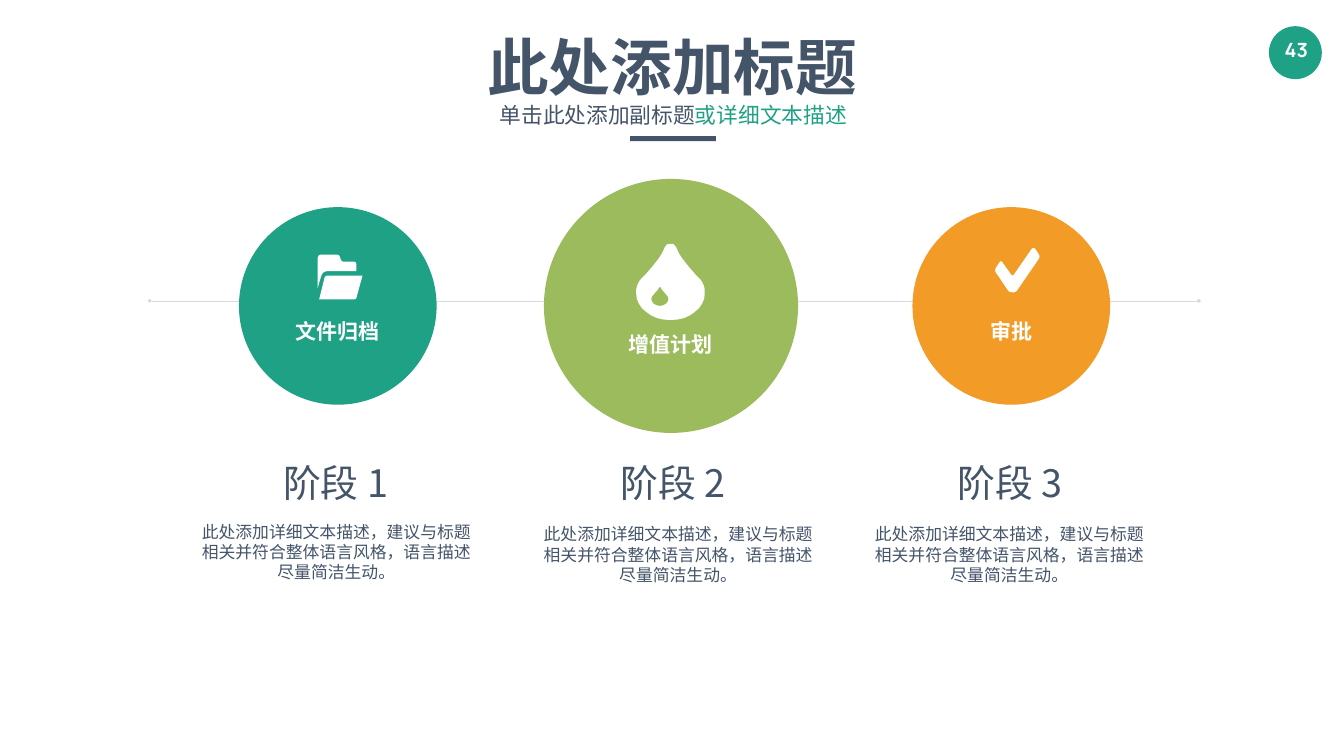
from lxml import etree
from pptx import Presentation
from pptx.dml.color import RGBColor
from pptx.enum.dml import MSO_LINE
from pptx.enum.shapes import MSO_CONNECTOR, MSO_SHAPE
from pptx.enum.text import MSO_ANCHOR, PP_ALIGN
from pptx.oxml.ns import qn
from pptx.util import Inches, Pt

COLORS = {"ink": "445469", "teal": "1EA185", "green": "9BBB5C",
          "orange": "F29B26", "rule": "D9D9D9", "white": "FFFFFF"}
CJK = "Noto Sans CJK SC"
DESCRIPTION = "此处添加详细文本描述，建议与标题相关并符合整体语言风格，语言描述尽量简洁生动。"

prs = Presentation()
prs.slide_width, prs.slide_height = Inches(26.66), Inches(15)
s = prs.slides.add_slide(prs.slide_layouts[6])


def paint(sp, color):
    """Give a shape a plain fill, with neither outline nor shadow."""
    sp.shadow.inherit = False
    sp.fill.solid()
    sp.fill.fore_color.rgb = RGBColor.from_string(COLORS[color])
    sp.line.fill.background()


def write(sp, parts, size, bold=False, font=CJK, insets=(0.27, 0.13),
          anchor=MSO_ANCHOR.TOP, wrap=True):
    """Fill a shape with one centred paragraph made of (text, color) parts."""
    tf = sp.text_frame
    tf.word_wrap = wrap
    tf.vertical_anchor = anchor
    tf.margin_left = tf.margin_right = Inches(insets[0])
    tf.margin_top = tf.margin_bottom = Inches(insets[1])
    p = tf.paragraphs[0]
    p.alignment = PP_ALIGN.CENTER
    for text, color in parts:
        r = p.add_run()
        r.text = text
        r.font.size, r.font.bold, r.font.name = Pt(size), bold, font
        r.font.color.rgb = RGBColor.from_string(COLORS[color])
        ea = etree.Element(qn("a:ea"), typeface=font)
        r.font._element.find(qn("a:latin")).addnext(ea)
    return tf


# Page number
badge = s.shapes.add_shape(MSO_SHAPE.OVAL, Inches(25.17), Inches(0.52),
                           Inches(1.05), Inches(1.05))
paint(badge, "teal")
number = s.shapes.add_textbox(Inches(25.23), Inches(0.66), Inches(0.97), Inches(0.67))
write(number, [("43", "white")], 28, True, "Manrope", (0.2, 0.1), wrap=False)

# Timeline
timeline = s.shapes.add_connector(MSO_CONNECTOR.STRAIGHT, Inches(2.97), Inches(5.97),
                                  Inches(23.78), Inches(5.97))
timeline.line.color.rgb = RGBColor.from_string(COLORS["rule"])
timeline.line.width = Pt(0.5)
timeline.line.dash_style = MSO_LINE.ROUND_DOT
ln = timeline.line._get_or_add_ln()
for end in ("a:headEnd", "a:tailEnd"):
    etree.SubElement(ln, qn(end), type="diamond")
etree.SubElement(timeline._element.spPr, qn("a:effectLst"))

# Stages: label, color, circle centre and diameter, label drop below the centre,
# left of the heading, left and top of the description
stages = [
    ("文件归档", "teal", 6.7, 3.92, 0.5, 3.61, 3.71, 10.22),
    ("增值计划", "green", 13.31, 5.04, 0.76, 10.3, 10.49, 10.27),
    ("审批", "orange", 20.06, 3.92, 0.5, 16.98, 17.06, 10.27),
]
for i, (label, color, cx, size, drop, head_x, desc_x, desc_y) in enumerate(stages, 1):
    circle = s.shapes.add_shape(MSO_SHAPE.OVAL, Inches(cx - size / 2),
                                Inches(6.07 - size / 2), Inches(size), Inches(size))
    paint(circle, color)
    tf = write(circle, [(label, "white")], 30, True, insets=(0.2, 0.1),
               anchor=MSO_ANCHOR.MIDDLE)
    tf.margin_top = Inches(0.1 + 2 * drop)

    heading = s.shapes.add_textbox(Inches(head_x), Inches(8.99), Inches(6.1), Inches(1.17))
    write(heading, [(f"阶段 {i}", "ink")], 54, anchor=MSO_ANCHOR.MIDDLE)
    desc = s.shapes.add_textbox(Inches(desc_x), Inches(desc_y), Inches(5.92), Inches(1.8))
    write(desc, [(DESCRIPTION, "ink")], 24)

# Icons: closed outlines in hundredths of an inch
check = [(2007, 580), (2003, 579), (2000, 577), (1975, 540), (1974, 536), (1975, 532),
         (1983, 520), (1986, 518), (1988, 520), (2006, 545), (2009, 547), (2011, 545),
         (2047, 493), (2050, 492), (2053, 493), (2061, 505), (2062, 509), (2061, 513),
         (2017, 577), (2014, 579), (2011, 580)]
folder_back = [(648, 538), (645, 539), (641, 541), (639, 544), (637, 548), (630, 572),
               (630, 512), (632, 507), (636, 505), (669, 505), (673, 507), (675, 512),
               (677, 517), (680, 519), (702, 519), (706, 521), (707, 525), (707, 538)]
folder_front = [(719, 547), (707, 591), (705, 593), (703, 594), (633, 594),
                (644, 550), (646, 548), (648, 547)]
# Right halves of the drop and of its hole, from top to bottom, around the axis
drop_half = [(0, 484), (4, 484), (7, 485), (11, 490), (16, 501), (22, 511), (29, 520),
             (36, 529), (43, 537), (49, 544), (58, 553), (62, 558), (66, 566), (68, 574),
             (68, 582), (67, 592), (63, 602), (57, 611), (48, 619), (38, 626), (27, 631),
             (14, 634), (0, 635)]
hole_half = [(0, 569), (2, 571), (5, 576), (9, 580), (12, 584), (14, 586), (16, 589),
             (17, 593), (16, 598), (12, 603), (6, 606), (0, 607)]
drop_outline, drop_hole = (
    [(axis + x, y) for x, y in half] + [(axis - x, y) for x, y in half[-2:0:-1]]
    for axis, half in ((1330, drop_half), (1309, hole_half)))

for outlines in ([check], [folder_back, folder_front], [drop_outline, drop_hole]):
    builder = s.shapes.build_freeform(*outlines[0][0], scale=Inches(0.01))
    builder.add_line_segments(outlines[0][1:], close=True)
    for outline in outlines[1:]:
        builder.move_to(*outline[0])
        builder.add_line_segments(outline[1:], close=True)
    paint(builder.convert_to_shape(), "white")

# Title block
title = s.shapes.add_textbox(Inches(6.57), Inches(0.53), Inches(13.52), Inches(1.58))
write(title, [("此处添加标题", "ink")], 88, True, insets=(0.1, 0.05))
bar = s.shapes.add_shape(MSO_SHAPE.RECTANGLE, Inches(12.5), Inches(2.7),
                         Inches(1.7), Inches(0.1))
paint(bar, "ink")
subtitle = s.shapes.add_textbox(Inches(6.98), Inches(1.79), Inches(12.75), Inches(0.92))
tf = write(subtitle, [("单击此处添加副标题", "ink"), ("或详细文本描述", "teal")], 31,
           insets=(0.24, 0.12))
tf.paragraphs[0].line_spacing = 1.2

prs.save("out.pptx")
